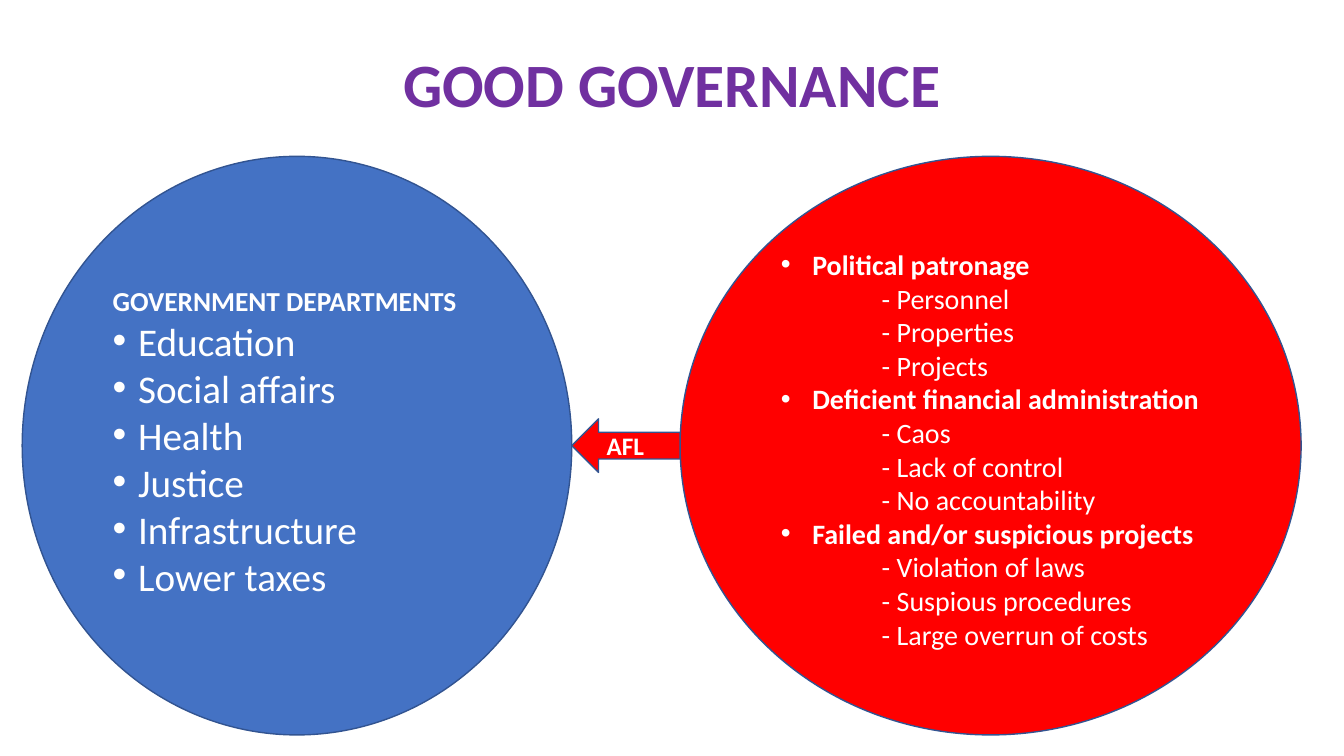
from dataclasses import dataclass

from lxml.etree import SubElement
from pptx import Presentation
from pptx.dml.color import RGBColor as RGB
from pptx.enum.shapes import MSO_SHAPE as Shape
from pptx.enum.text import MSO_ANCHOR as Anchor, MSO_AUTO_SIZE as AutoSize, PP_ALIGN as Align
from pptx.oxml.ns import qn
from pptx.util import Cm, Pt

TITLE = "GOOD GOVERNANCE"
DEPARTMENTS_HEADING = "GOVERNMENT DEPARTMENTS"
DEPARTMENTS = ["Education", "Social affairs", "Health", "Justice", "Infrastructure", "Lower taxes"]
PROBLEMS = {
    "Political patronage": ["Personnel", "Properties", "Projects"],
    "Deficient financial administration": ["Caos", "Lack of control", "No accountability"],
    "Failed and/or suspicious projects": [
        "Violation of laws", "Suspious procedures", "Large overrun of costs"],
}
ARROW_LABEL = "AFL"


@dataclass(frozen=True)
class Theme:
    font: str = "Calibri"
    title: RGB = RGB(0x70, 0x30, 0xA0)
    good: RGB = RGB(0x44, 0x72, 0xC4)
    bad: RGB = RGB(0xFF, 0x00, 0x00)
    outline: RGB = RGB(0x32, 0x54, 0x91)
    text: RGB = RGB(0xFF, 0xFF, 0xFF)
    title_size: float = 44
    heading_size: float = 19.6
    department_size: float = 28
    problem_size: float = 20
    label_size: float = 18


THEME = Theme()

CIRCLE_TOP, CIRCLE_H = Cm(3.94), Cm(14.58)
GOOD_LEFT, GOOD_W = Cm(0.56), Cm(13.85)
BAD_LEFT, BAD_W = Cm(17.14), Cm(15.65)
ARROW_H = Cm(1.35)
LABEL_W, LABEL_H = Cm(1.47), Cm(1.02)


def place(sp, left, top, width, height):
    sp.left, sp.top, sp.width, sp.height = left, top, width, height


def paint(sp, color):
    sp.fill.solid()
    sp.fill.fore_color.rgb = color
    sp.line.color.rgb = THEME.outline
    sp.line.width = Pt(1)


def prepare_frame(sp, anchor=Anchor.MIDDLE):
    tf = sp.text_frame
    tf.word_wrap = True
    tf.auto_size = AutoSize.NONE
    tf.vertical_anchor = anchor
    return tf


def add_line(tf, text, size, bold=False, color=THEME.text, align=Align.LEFT):
    """Write text into the frame's first paragraph if empty, else into a new one."""
    p = tf.paragraphs[0]
    if p.runs:
        p = tf.add_paragraph()
    p.alignment = align
    r = p.add_run()
    r.text = text
    r.font.name, r.font.size, r.font.bold = THEME.font, Pt(size), bold
    r.font.color.rgb = color
    return p


def indent(p, left, bullet=False):
    """Set the left indent; a bullet hangs in it."""
    pPr = p._p.get_or_add_pPr()
    pPr.set("marL", str(left))
    pPr.set("indent", str(-left if bullet else 0))
    if bullet:
        SubElement(pPr, qn("a:buFont"), typeface="Arial")
        SubElement(pPr, qn("a:buChar"), char="•")
    else:
        SubElement(pPr, qn("a:buNone"))


def space(p):
    p.line_spacing = 0.7
    p.space_before = Pt(10)


def add_title(sp):
    place(sp, Cm(2.33), Cm(1.02), Cm(29.21), Cm(2.36))
    tf = prepare_frame(sp)
    p = add_line(tf, TITLE, THEME.title_size, True, THEME.title, Align.CENTER)
    p.line_spacing = 0.9


def add_departments(sp):
    place(sp, GOOD_LEFT, CIRCLE_TOP, GOOD_W, CIRCLE_H)
    geometry = SubElement(sp._element.spPr, qn("a:prstGeom"), prst="ellipse")
    SubElement(geometry, qn("a:avLst"))
    paint(sp, THEME.good)
    tf = prepare_frame(sp)
    p = add_line(tf, DEPARTMENTS_HEADING, THEME.heading_size, True)
    space(p)
    indent(p, Cm(0))
    for department in DEPARTMENTS:
        p = add_line(tf, department, THEME.department_size)
        space(p)
        indent(p, Cm(0.64), bullet=True)


def add_problems(shapes):
    sp = shapes.add_shape(Shape.OVAL, BAD_LEFT, CIRCLE_TOP, BAD_W, CIRCLE_H)
    sp.shadow.inherit = False
    paint(sp, THEME.bad)
    tf = prepare_frame(sp)
    tf.margin_top = Cm(0.3)
    for problem, examples in PROBLEMS.items():
        indent(add_line(tf, problem, THEME.problem_size, True), Cm(0.79), bullet=True)
        for example in examples:
            indent(add_line(tf, f"- {example}", THEME.problem_size), Cm(2.54))


def add_arrow(shapes):
    left = GOOD_LEFT + GOOD_W
    width = BAD_LEFT - left
    middle = CIRCLE_TOP + CIRCLE_H // 2
    sp = shapes.add_shape(Shape.LEFT_ARROW, left, middle - ARROW_H // 2, width, ARROW_H)
    sp.shadow.inherit = False
    paint(sp, THEME.bad)
    box = shapes.add_textbox(left + (width - LABEL_W) // 2, middle - LABEL_H // 2,
                             LABEL_W, LABEL_H)
    tf = prepare_frame(box, Anchor.TOP)
    tf.word_wrap = False
    add_line(tf, ARROW_LABEL, THEME.label_size, True)


def main():
    prs = Presentation()
    prs.slide_width, prs.slide_height = Cm(33.87), Cm(19.05)
    s = prs.slides.add_slide(prs.slide_layouts[1])
    add_title(s.shapes.title)
    add_departments(s.placeholders[1])
    add_problems(s.shapes)
    add_arrow(s.shapes)
    prs.save("out.pptx")


if __name__ == "__main__":
    main()
